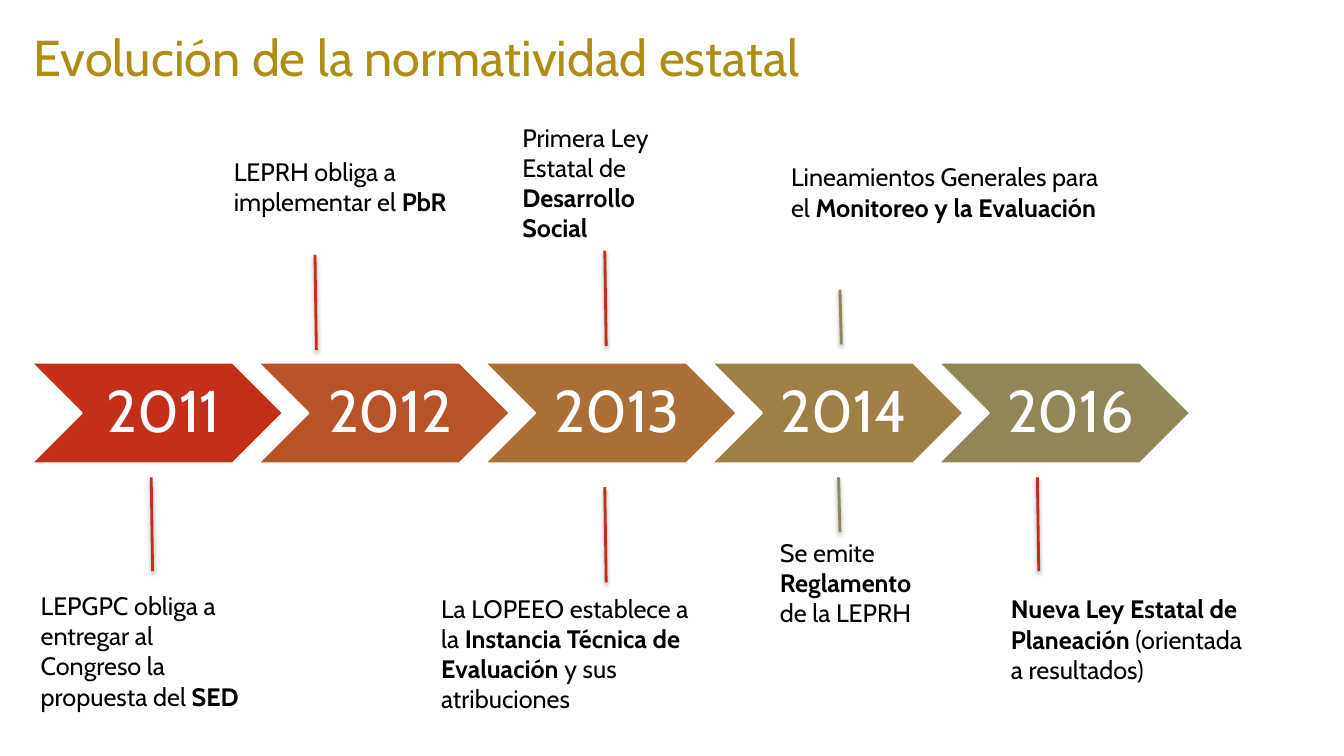
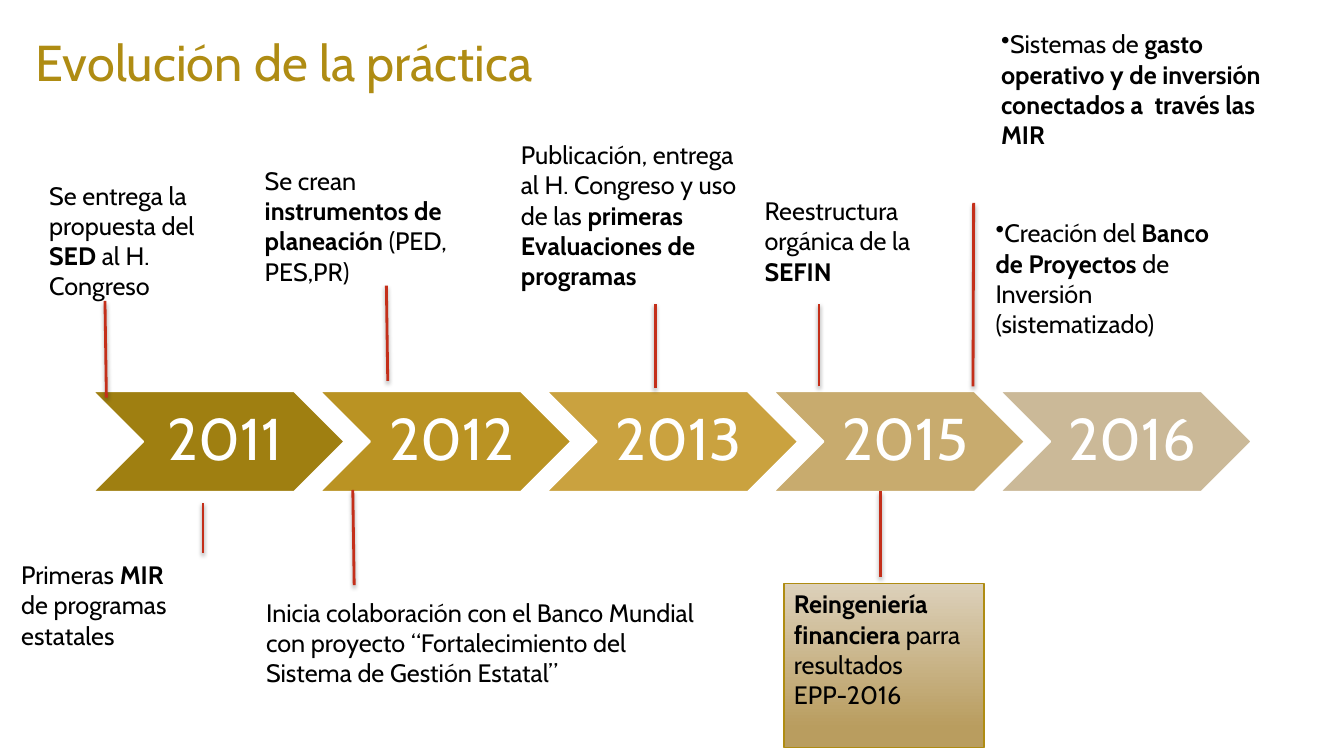
from dataclasses import dataclass
from typing import NamedTuple

from lxml.etree import SubElement
from pptx import Presentation
from pptx.dml.color import RGBColor as Rgb
from pptx.enum.shapes import MSO_CONNECTOR as Connector, MSO_SHAPE as Shape
from pptx.enum.text import MSO_ANCHOR as Anchor, MSO_AUTO_SIZE as AutoSize, PP_ALIGN as Align
from pptx.oxml.ns import qn
from pptx.util import Pt


@dataclass(frozen=True)
class Theme:
    font: str = "Cabin"
    title_size: int = 36
    year_size: int = 42
    note_size: int = 18
    gold: str = "AF8C13"
    red: str = "C42F1A"
    olive: str = "918655"
    black: str = "000000"
    white: str = "FFFFFF"
    panel_top: str = "DCD0BA"
    panel_bottom: str = "B99D5F"


THEME = Theme()
PAGE_WIDTH, PAGE_HEIGHT = 960, 540
CHEVRON_WIDTH, CHEVRON_HEIGHT, CHEVRON_STEP = 180, 72, 162


class Tick(NamedTuple):
    """A marker line; lean is how far its foot lies to the right of its head."""
    foot: float
    top: float
    bottom: float
    lean: float = 1
    color: str = THEME.red


class Note(NamedTuple):
    """A text block; ** switches bold on and off and a newline starts a paragraph."""
    left: float
    top: float
    width: float
    height: float
    text: str
    bullet: bool = False
    panel: bool = False


class Milestone(NamedTuple):
    year: str
    color: str


@dataclass(frozen=True)
class Timeline:
    title: str
    title_at: tuple[float, float]
    band_at: tuple[float, float]
    milestones: list[Milestone]
    ticks: list[Tick]
    notes: list[Note]


TIMELINES = [
    Timeline(
        "Evolución de la normatividad estatal", (17, 15), (22.3, 259),
        [
            Milestone("2011", "C42F1A"),
            Milestone("2012", "B85328"),
            Milestone("2013", "AB6E37"),
            Milestone("2014", "9E7F46"),
            Milestone("2016", "918655"),
        ],
        [
            Tick(226, 182, 250),
            Tick(601, 207, 246, color=THEME.olive),
            Tick(433, 348, 416),
            Tick(742, 341, 408),
            Tick(109, 341, 408),
            Tick(433, 179, 247),
            Tick(600, 341, 380, color=THEME.olive),
        ],
        [
            Note(160, 108, 174, 73, "LEPRH obliga a implementar el **PbR**"),
            Note(558, 112, 236, 73, "Lineamientos Generales para el **Monitoreo y la Evaluación**"),
            Note(308, 420, 200, 94,
                 "La LOPEEO establece a la **Instancia Técnica de Evaluación **y sus atribuciones"),
            Note(715, 420.5, 184, 94, "**Nueva Ley Estatal de Planeación **(orientada a resultados)"),
            Note(22, 418, 169, 94, "LEPGPC obliga a entregar al Congreso la propuesta del **SED**"),
            Note(366, 83.5, 145, 94, "Primera Ley Estatal de **Desarrollo Social**"),
            Note(550, 380, 114, 73, "Se emite **Reglamento **de la LEPRH"),
        ],
    ),
    Timeline(
        "Evolución de la práctica", (18.5, 18.5), (66.2, 279.4),
        [
            Milestone("2011", "9F7F11"),
            Milestone("2012", "BA9323"),
            Milestone("2013", "CAA23F"),
            Milestone("2015", "C8AB6E"),
            Milestone("2016", "CBB998"),
        ],
        [
            Tick(76, 215, 284),
            Tick(468, 217, 277, 0),
            Tick(253, 350, 418),
            Tick(277, 204, 272),
            Tick(145, 359, 395, 0),
            Tick(629, 351, 412, 0),
            Tick(585, 217, 276, 0),
            Tick(695, 145, 276, -0.5),
        ],
        [
            Note(182, 114.5, 179, 94, "Se crean **instrumentos de planeación** (PED, PES,PR)"),
            Note(365, 96, 174, 138,
                 "Publicación, entrega al H. Congreso y uso de las **primeras Evaluaciones de programas**"),
            Note(183, 423, 330, 73, "Inicia colaboración con el Banco Mundial con proyecto "
                                    "“Fortalecimiento del Sistema de Gestión Estatal”"),
            Note(28, 125, 129, 94, "Se entrega la propuesta del **SED** al H. Congreso"),
            Note(8, 396, 137, 73, "Primeras **MIR**\nde programas estatales"),
            Note(560, 417, 143, 117,
                 "**Reingeniería financiera **parra resultados EPP-2016", panel=True),
            Note(708, 17, 200, 94,
                 "Sistemas de **gasto operativo y de inversión conectados a  través las MIR**",
                 bullet=True),
            Note(539, 136, 123, 73, "Reestructura orgánica de la **SEFIN**"),
            Note(704, 152, 181, 94,
                 "Creación del **Banco de Proyectos **de Inversión (sistematizado)", bullet=True),
        ],
    ),
]


def apply_format(target, values: dict) -> None:
    for name, value in values.items():
        setattr(target, name, value)


def write_spans(para, text: str, size: float, color: str) -> None:
    for index, piece in enumerate(text.split("**")):
        if piece:
            span = para.add_run()
            span.text = piece
            apply_format(span.font, {"name": THEME.font, "size": Pt(size), "bold": index % 2 == 1})
            span.font.color.rgb = Rgb.from_string(color)


def add_bullet(para) -> None:
    properties = para._p.get_or_add_pPr()
    properties.set("marL", "0")
    properties.set("indent", "0")
    SubElement(properties, qn("a:buChar")).set("char", "•")


def add_tick_shadow(line) -> None:
    effects = SubElement(line._element.spPr, qn("a:effectLst"))
    shadow = SubElement(effects, qn("a:outerShdw"))
    for name, value in {"blurRad": Pt(3), "dist": Pt(2), "dir": 90 * 60000, "rotWithShape": 0}.items():
        shadow.set(name, str(int(value)))
    color = SubElement(shadow, qn("a:srgbClr"))
    color.set("val", THEME.black)
    SubElement(color, qn("a:alpha")).set("val", "35000")


def draw_title(page, text: str, left: float, top: float) -> None:
    box = page.shapes.add_textbox(Pt(left), Pt(top), Pt(828), Pt(80))
    box.text_frame.word_wrap = True
    write_spans(box.text_frame.paragraphs[0], text, THEME.title_size, THEME.gold)


def draw_chevron(page, milestone: Milestone, left: float, top: float) -> None:
    chevron = page.shapes.add_shape(
        Shape.CHEVRON, Pt(left), Pt(top), Pt(CHEVRON_WIDTH), Pt(CHEVRON_HEIGHT))
    chevron.shadow.inherit = False
    chevron.fill.solid()
    chevron.fill.fore_color.rgb = Rgb.from_string(milestone.color)
    chevron.line.color.rgb = Rgb.from_string(THEME.white)
    chevron.line.width = Pt(1.5)
    apply_format(chevron.text_frame, {
        "word_wrap": False, "vertical_anchor": Anchor.MIDDLE, "margin_left": Pt(13),
        "margin_right": Pt(4), "margin_top": Pt(4), "margin_bottom": Pt(4)})
    para = chevron.text_frame.paragraphs[0]
    apply_format(para, {"alignment": Align.CENTER, "line_spacing": 0.9})
    write_spans(para, milestone.year, THEME.year_size, THEME.white)


def draw_tick(page, tick: Tick) -> None:
    line = page.shapes.add_connector(
        Connector.STRAIGHT, Pt(tick.foot), Pt(tick.bottom), Pt(tick.foot - tick.lean), Pt(tick.top))
    line.line.color.rgb = Rgb.from_string(tick.color)
    line.line.width = Pt(2)
    add_tick_shadow(line)


def add_panel(page, frame: list):
    panel = page.shapes.add_shape(Shape.RECTANGLE, *frame)
    panel.shadow.inherit = False
    panel.fill.gradient()
    panel.fill.gradient_angle = 270
    stops = [(0, THEME.panel_top), (0.88, THEME.panel_bottom)]
    for stop, (position, color) in zip(panel.fill.gradient_stops, stops):
        stop.position = position
        stop.color.rgb = Rgb.from_string(color)
    panel.line.color.rgb = Rgb.from_string(THEME.gold)
    panel.line.width = Pt(1)
    return panel


def draw_note(page, note: Note) -> None:
    frame = [Pt(length) for length in note[:4]]
    box = add_panel(page, frame) if note.panel else page.shapes.add_textbox(*frame)
    apply_format(box.text_frame, {
        "word_wrap": True, "vertical_anchor": Anchor.TOP,
        "auto_size": AutoSize.NONE if note.panel else AutoSize.SHAPE_TO_FIT_TEXT})
    for index, text in enumerate(note.text.split("\n")):
        para = box.text_frame.add_paragraph() if index else box.text_frame.paragraphs[0]
        para.alignment = Align.LEFT
        if note.bullet:
            add_bullet(para)
        write_spans(para, text, THEME.note_size, THEME.black)


def draw_timeline(deck, timeline: Timeline) -> None:
    page = deck.slides.add_slide(deck.slide_layouts[6])
    draw_title(page, timeline.title, *timeline.title_at)
    left, top = timeline.band_at
    for index, milestone in enumerate(timeline.milestones):
        draw_chevron(page, milestone, left + index * CHEVRON_STEP, top)
    for tick in timeline.ticks:
        draw_tick(page, tick)
    for note in timeline.notes:
        draw_note(page, note)


def main() -> None:
    deck = Presentation()
    apply_format(deck, {"slide_width": Pt(PAGE_WIDTH), "slide_height": Pt(PAGE_HEIGHT)})
    for timeline in TIMELINES:
        draw_timeline(deck, timeline)
    deck.save("out.pptx")


if __name__ == "__main__":
    main()
